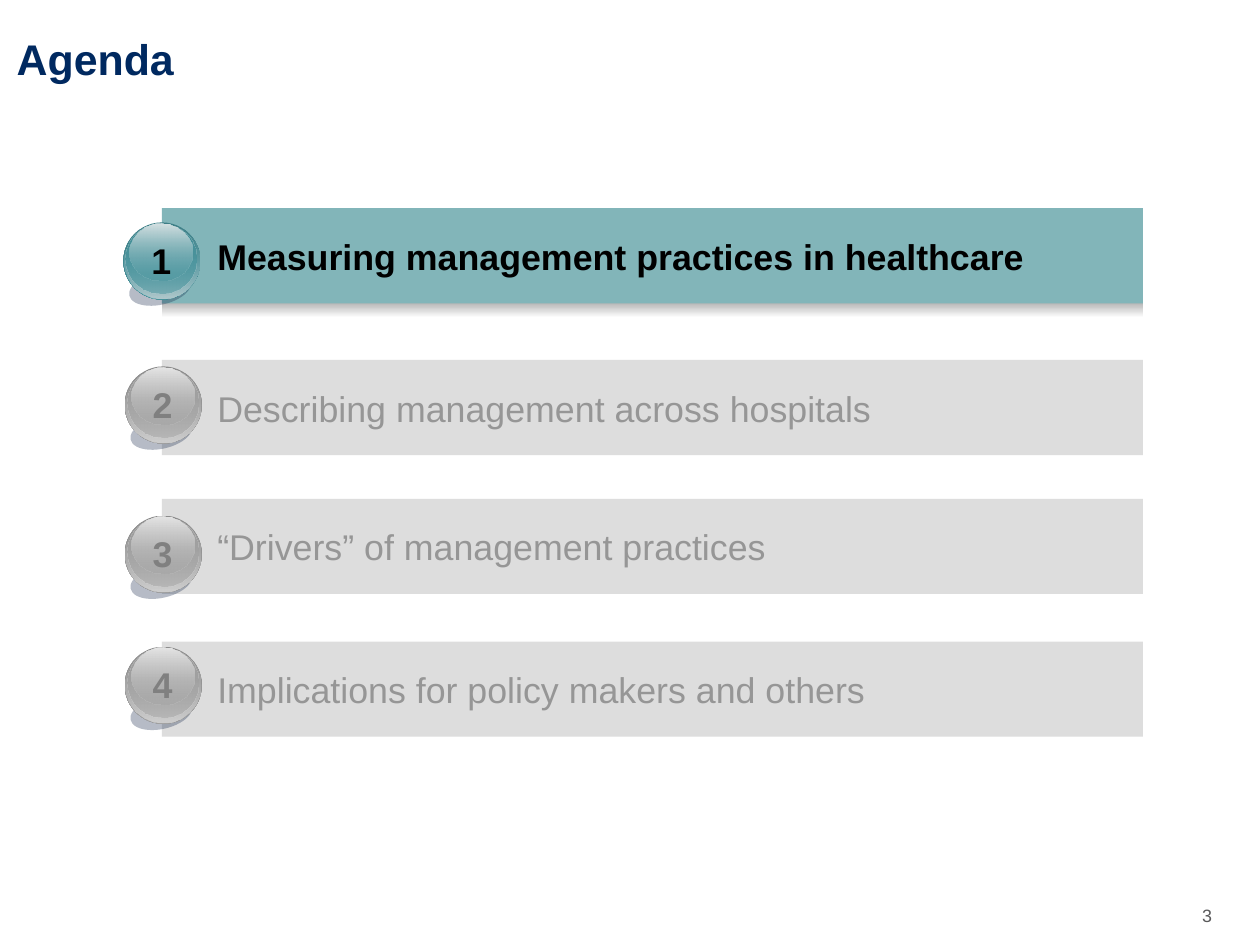
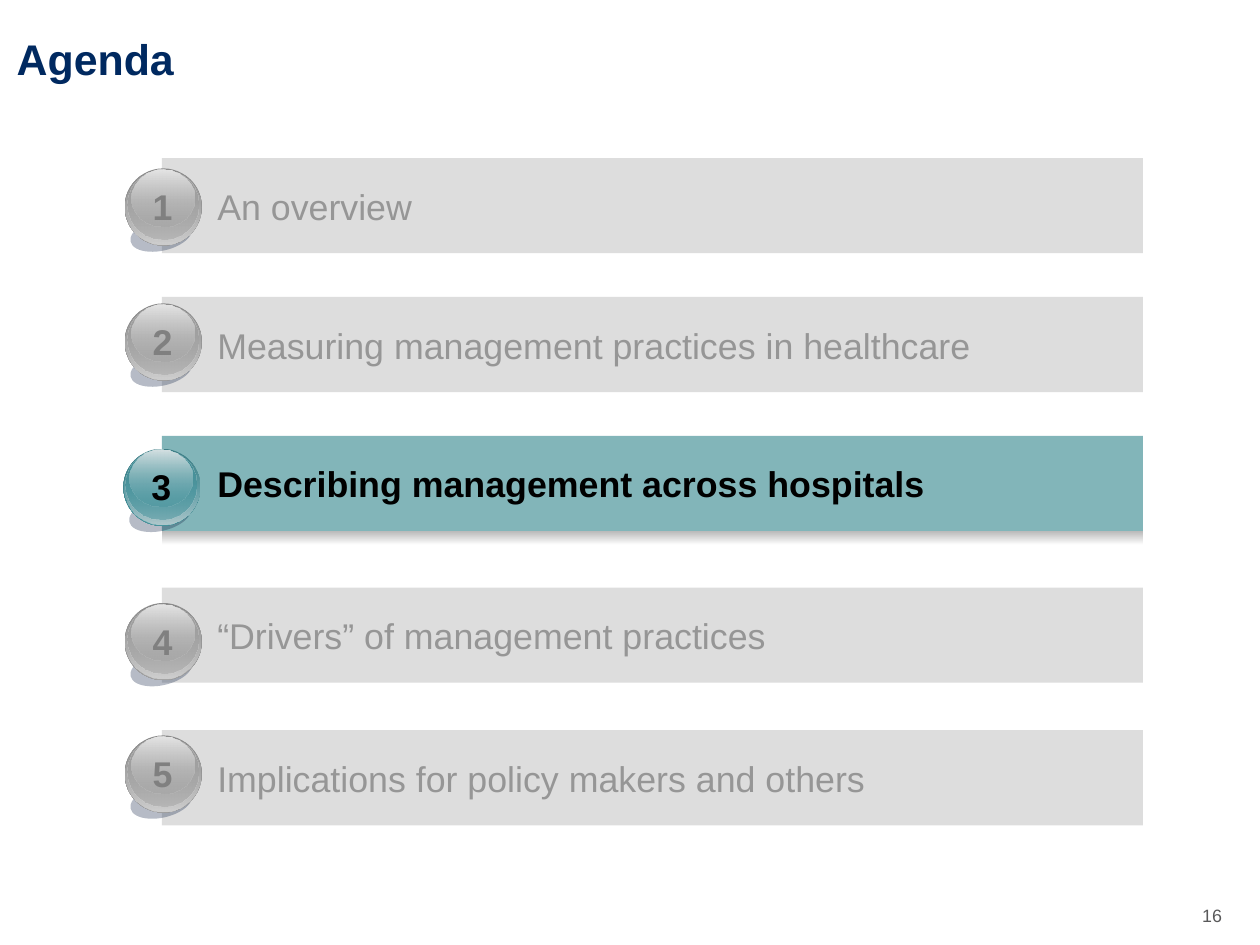
from dataclasses import dataclass

from lxml.etree import SubElement
from pptx import Presentation
from pptx.dml.color import RGBColor
from pptx.enum.shapes import MSO_SHAPE
from pptx.enum.text import MSO_ANCHOR, MSO_AUTO_SIZE, PP_ALIGN
from pptx.oxml.ns import qn
from pptx.util import Inches, Pt


@dataclass(frozen=True)
class RowStyle:
    bar: str
    label: str
    number: str
    bold: bool
    ball_left: float
    rim: tuple
    glow: tuple
    body: tuple
    shine: tuple


@dataclass(frozen=True)
class Theme:
    font: str = "Arial"
    title: str = "002960"
    page: str = "59595A"
    ball_shadow: tuple = (("0F2145", 30),)
    bar_shadow: tuple = (("A4A4A4", 100), ("FFFFFF", 100))
    title_size: int = 24
    label_size: int = 20
    page_size: int = 10


THEME = Theme()
# Gradients list (colour, opacity in percent) from top to bottom.
INACTIVE = RowStyle(
    bar="DDDDDD", label="969696", number="808080", bold=False, ball_left=0.97,
    rim=(("8C8C8C", 100), ("A4A4A4", 100)),
    glow=(("A4A4A4", 0), ("CECECE", 100)),
    body=(("A1A1A1", 100), ("A4A4A4", 48)),
    shine=(("E5E5E5", 100), ("A4A4A4", 38)))
ACTIVE = RowStyle(
    bar="82B5B9", label="000000", number="000000", bold=True, ball_left=0.96,
    rim=(("3E7F87", 100), ("48959E", 100)),
    glow=(("48959E", 0), ("B1C8CC", 100)),
    body=(("47929B", 100), ("48959E", 48)),
    shine=(("D6E1E3", 100), ("48959E", 38)))

BAR_LEFT, BAR_WIDTH, BAR_HEIGHT = 1.26, 7.63, 0.74
LABEL_LEFT, LABEL_WIDTH, LABEL_HEIGHT = 1.69, 6.94, 0.33

MEASURING = "Measuring management practices in healthcare"
DESCRIBING = "Describing management across hospitals"
DRIVERS = "“Drivers” of management practices"
IMPLICATIONS = "Implications for policy makers and others"

# Page number, active row, and rows of (label, bar top, ball top).
AGENDAS = [
    ("3", 1, [(MEASURING, 1.62, 1.73), (DESCRIBING, 2.8, 2.85),
              (DRIVERS, 3.88, 4.01), (IMPLICATIONS, 4.99, 5.03)]),
    ("16", 3, [("An overview", 1.23, 1.31), (MEASURING, 2.31, 2.36),
               (DESCRIBING, 3.39, 3.49), (DRIVERS, 4.57, 4.69),
               (IMPLICATIONS, 5.68, 5.72)]),
]


def write(shape, text, size, color, bold=False, align=PP_ALIGN.LEFT,
          anchor=MSO_ANCHOR.TOP, margin=0, wrap=True):
    frame = shape.text_frame
    frame.auto_size = MSO_AUTO_SIZE.NONE
    frame.word_wrap = wrap
    frame.vertical_anchor = anchor
    frame.margin_left = frame.margin_right = Inches(margin)
    frame.margin_top = frame.margin_bottom = Inches(margin)
    paragraph = frame.paragraphs[0]
    paragraph.alignment = align
    run = paragraph.add_run()
    run.text = text
    run.font.name = THEME.font
    run.font.size = Pt(size)
    run.font.bold = bold
    run.font.color.rgb = RGBColor.from_string(color)


def draw(shapes, kind, left, top, width, height, stops=()):
    """Add a shape without outline: no stop leaves it empty, one is solid, two a gradient."""
    shape = shapes.add_shape(kind, Inches(left), Inches(top), Inches(width), Inches(height))
    shape.shadow.inherit = False
    shape.line.fill.background()
    if not stops:
        shape.fill.background()
    elif len(stops) == 1:
        shape.fill.solid()
        shape.fill.fore_color.rgb = RGBColor.from_string(stops[0][0])
    else:
        shape.fill.gradient()
        shape.fill.gradient_angle = 270
        for gradient_stop, (color, _) in zip(shape.fill.gradient_stops, stops):
            gradient_stop.color.rgb = RGBColor.from_string(color)
    for color_element, (_, opacity) in zip(shape.element.spPr.iter(qn("a:srgbClr")), stops):
        if opacity < 100:
            SubElement(color_element, qn("a:alpha")).set("val", str(opacity * 1000))
    return shape


deck = Presentation()
deck.slide_width, deck.slide_height = Inches(9.8), Inches(7.35)
title_only = deck.slide_layouts[5]

for page, active_row, rows in AGENDAS:
    slide = deck.slides.add_slide(title_only)

    title = slide.shapes.title
    title.left, title.top = Inches(0.13), Inches(0.25)
    title.width, title.height = Inches(9.43), Inches(0.4)
    write(title, "Agenda", size=THEME.title_size, color=THEME.title, bold=True)

    page_number = slide.shapes.add_textbox(
        Inches(9.35), Inches(7.04), Inches(0.21), Inches(0.17))
    write(page_number, page, size=THEME.page_size, color=THEME.page, wrap=False)

    for number, (label, bar_top, ball_top) in enumerate(rows, start=1):
        style = ACTIVE if number == active_row else INACTIVE
        row = slide.shapes.add_group_shape().shapes

        if style is ACTIVE:
            draw(row, MSO_SHAPE.RECTANGLE, BAR_LEFT, bar_top + 0.71, BAR_WIDTH, 0.14,
                 THEME.bar_shadow)
        draw(row, MSO_SHAPE.RECTANGLE, BAR_LEFT, bar_top, BAR_WIDTH, BAR_HEIGHT,
             ((style.bar, 100),))
        caption = row.add_textbox(
            Inches(LABEL_LEFT), Inches(bar_top + (BAR_HEIGHT - LABEL_HEIGHT) / 2),
            Inches(LABEL_WIDTH), Inches(LABEL_HEIGHT))
        write(caption, label, size=THEME.label_size, color=style.label, bold=style.bold)

        ball_shadow = draw(row, MSO_SHAPE.OVAL, style.ball_left + 0.04, ball_top + 0.39,
                           0.49, 0.25, THEME.ball_shadow)
        ball_shadow.rotation = 347.1
        for dx, dy, width, height, stops in (
                (0, 0, 0.6, 0.6, style.rim),
                (0.01, 0.01, 0.58, 0.58, style.glow),
                (0.02, 0.01, 0.55, 0.54, style.body),
                (0.05, 0.01, 0.49, 0.44, style.shine)):
            draw(row, MSO_SHAPE.OVAL, style.ball_left + dx, ball_top + dy, width, height, stops)
        digit = draw(row, MSO_SHAPE.OVAL, style.ball_left + 0.19, ball_top + 0.19, 0.21, 0.21)
        write(digit, str(number), size=THEME.label_size, color=style.number, bold=True,
              align=PP_ALIGN.CENTER, anchor=MSO_ANCHOR.MIDDLE, margin=0.08, wrap=False)

deck.save("out.pptx")
